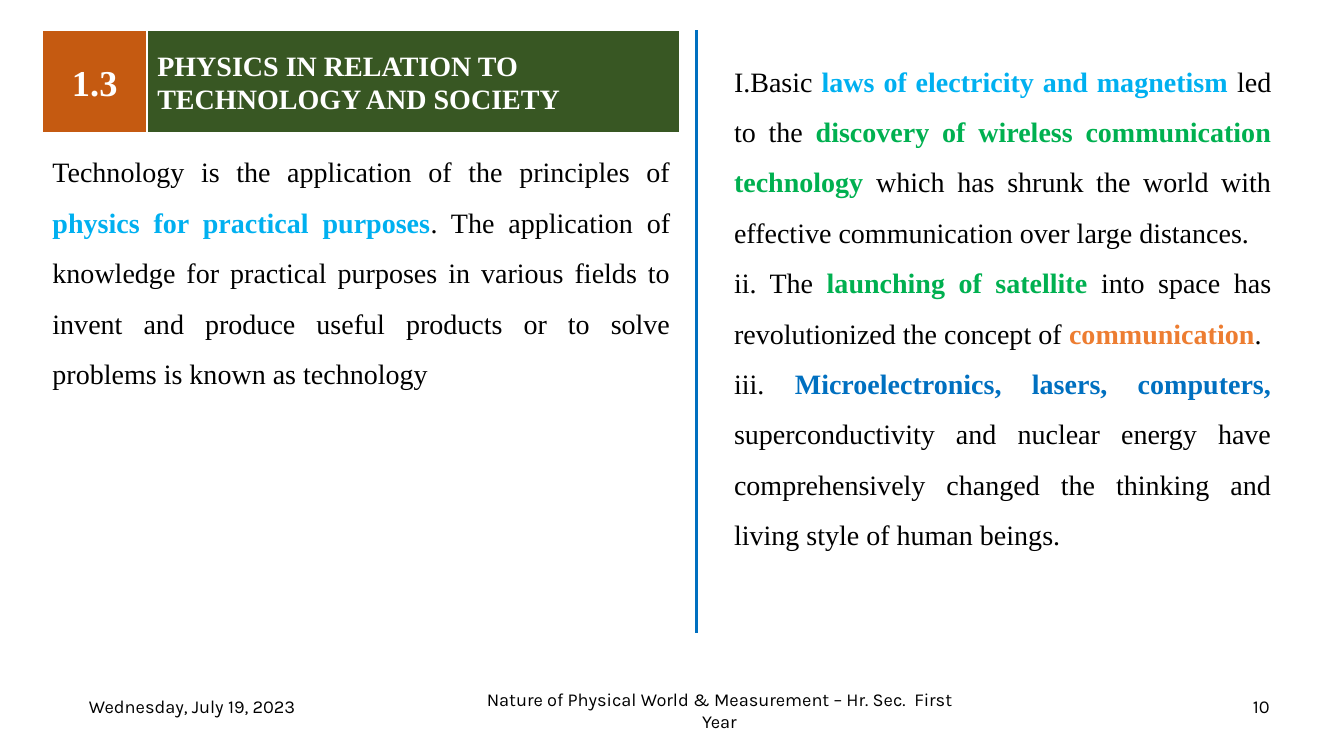
from lxml import etree
from pptx import Presentation
from pptx import util as u
from pptx.dml.color import RGBColor
from pptx.enum import shapes, text
from pptx.oxml import ns

PX = u.Inches(1) // 100
COLORS = {
    "black": "000000", "white": "FFFFFF", "rust": "C55A11", "forest": "385723",
    "sky": "00B0F0", "green": "00B050", "orange": "ED7D31", "blue": "0070C0",
}
SERIF, SANS = "Times New Roman", "Karla"

DEFINITION = [[
    ("Technology is the application of the principles of ", None),
    ("physics for practical purposes", "sky"),
    (". The application of knowledge for practical purposes in various fields to invent and "
     "produce useful products or to solve problems is known as technology ", None),
]]
EXAMPLES = [
    [("I.Basic ", None),
     ("laws of electricity and magnetism ", "sky"),
     ("led to the ", None),
     ("discovery of wireless communication technology ", "green"),
     ("which has shrunk the world with effective communication over large distances. ", None)],
    [("ii. The ", None),
     ("launching of satellite ", "green"),
     ("into space has revolutionized the concept of ", None),
     ("communication", "orange"),
     (". ", None)],
    [("iii. ", None),
     ("Microelectronics, lasers, computers, ", "blue"),
     ("superconductivity and nuclear energy have comprehensively changed the thinking and "
      "living style of human beings.", None)],
]
FOOTERS = [
    ("Wednesday, July 19, 2023", (71, 681, 239, 40)),
    ("Nature of Physical World & Measurement – Hr. Sec.  First Year", (455, 685, 517, 40)),
    ("10", (1230, 681, 42, 40)),
]


def rgb(name):
    """Return the named colour."""
    return RGBColor.from_string(COLORS[name])


def emu(*lengths):
    """Turn px lengths into EMU."""
    return [u.Emu(length * PX) for length in lengths]


def place(part, box):
    """Move a part to a px box."""
    part.left, part.top, part.width, part.height = emu(*box)


def write(part, paragraphs, size=20, font=SERIF, color="black", bold=False,
          align=text.PP_ALIGN.CENTER, anchor=text.MSO_ANCHOR.MIDDLE, spacing=1.0):
    """Fill a part with paragraphs of (words, accent) runs; accents are bold."""
    frame = part.text_frame
    frame.word_wrap = True
    frame.auto_size = text.MSO_AUTO_SIZE.NONE
    frame.vertical_anchor = anchor
    for index, runs in enumerate(paragraphs):
        paragraph = frame.add_paragraph() if index else frame.paragraphs[0]
        paragraph.alignment = align
        paragraph.line_spacing = spacing
        paragraph.space_before = u.Pt(0)
        for words, accent in runs:
            run = paragraph.add_run()
            run.text = words
            run.font.name = font
            run.font.size = u.Pt(size)
            run.font.bold = bold or accent is not None
            run.font.color.rgb = rgb(accent or color)


def paint(part, fill):
    """Give a part a solid fill and a white outline."""
    part.fill.solid()
    part.fill.fore_color.rgb = rgb(fill)
    part.line.color.rgb = rgb("white")
    part.line.width = u.Pt(1.5)


def add_heading(slide, box, number_width=104):
    """Put the section number and the slide title side by side in the box."""
    left, top, width, height = box
    number = slide.shapes.add_shape(shapes.MSO_SHAPE.RECTANGLE,
                                    *emu(left, top, number_width, height))
    number.shadow.inherit = False
    paint(number, "rust")
    write(number, [[("1.3", None)]], size=26, color="white", bold=True)

    heading = slide.shapes.title
    place(heading, (left + number_width, top, width - number_width, height))
    paint(heading, "forest")
    write(heading, [[("PHYSICS IN RELATION TO TECHNOLOGY AND SOCIETY", None)]],
          color="white", bold=True, align=text.PP_ALIGN.LEFT)


def add_column(column, box, paragraphs):
    """Set justified paragraphs without bullets in a body placeholder."""
    place(column, box)
    write(column, paragraphs, align=text.PP_ALIGN.JUSTIFY,
          anchor=text.MSO_ANCHOR.TOP, spacing=1.5)
    for paragraph in column.text_frame.paragraphs:
        properties = paragraph._p.get_or_add_pPr()
        properties.set("marL", "0")
        properties.set("indent", "0")
        etree.SubElement(properties, ns.qn("a:buNone"))


def add_divider(slide, x, top, bottom):
    """Draw the vertical rule between the columns."""
    divider = slide.shapes.add_connector(shapes.MSO_CONNECTOR.STRAIGHT,
                                         *emu(x, top, x, bottom))
    divider.line.color.rgb = rgb("blue")
    divider.line.width = u.Pt(2.25)
    etree.SubElement(divider._element.spPr, ns.qn("a:effectLst"))


def add_footers(slide):
    """Add the date, course name and page number."""
    for words, box in FOOTERS:
        footer = slide.shapes.add_textbox(*emu(*box))
        write(footer, [[(words, None)]], size=13, font=SANS)


def main():
    """Build and save the slide."""
    deck = Presentation()
    deck.slide_width, deck.slide_height = emu(1333, 750)
    slide = deck.slides.add_slide(deck.slide_layouts.get_by_name("Two Content"))
    definition, examples = list(slide.placeholders)[1:]
    add_footers(slide)
    add_divider(slide, 691, 30, 628)
    add_heading(slide, (42, 30, 633, 102))
    add_column(definition, (42, 132, 633, 263), DEFINITION)
    add_column(examples, (718, 42, 553, 611), EXAMPLES)
    deck.save("out.pptx")


if __name__ == "__main__":
    main()
